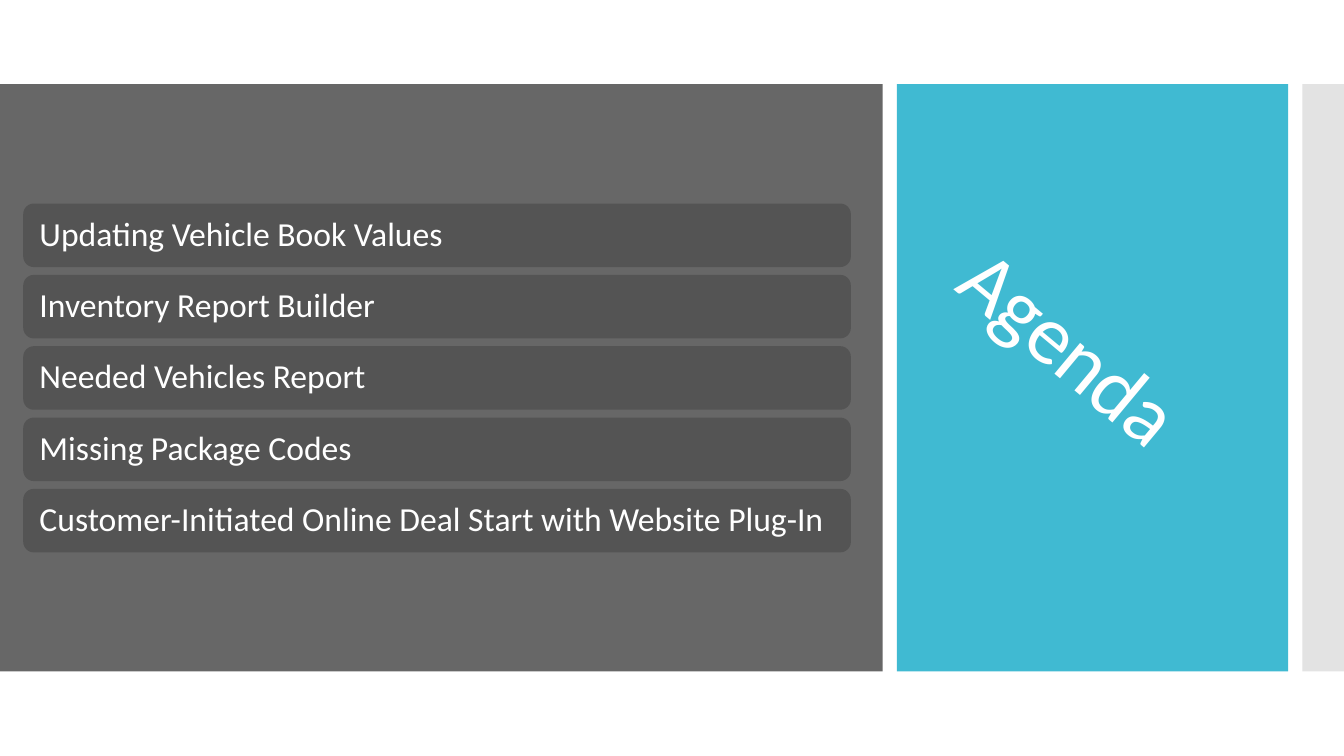
from pptx import Presentation
from pptx.dml.color import RGBColor
from pptx.enum import shapes, text
from pptx.util import Pt

COLORS = {"panel": "676767", "bar": "545454", "accent": "40BAD2",
          "strip": "E3E3E3", "white": "FFFFFF"}

presentation = Presentation()
presentation.slide_width, presentation.slide_height = Pt(960), Pt(540)
slide = presentation.slides.add_slide(presentation.slide_layouts[6])


def add_block(kind, left, top, width, height, color):
    shape = slide.shapes.add_shape(kind, Pt(left), Pt(top), Pt(width), Pt(height))
    shape.shadow.inherit = False
    shape.fill.solid()
    shape.fill.fore_color.rgb = RGBColor.from_string(COLORS[color])
    shape.line.fill.background()
    return shape


def write_text(shape, content, size, inset, spacing=None):
    frame = shape.text_frame
    frame.word_wrap = True
    frame.vertical_anchor = text.MSO_ANCHOR.MIDDLE
    frame.margin_left = frame.margin_right = Pt(inset)
    frame.margin_top = frame.margin_bottom = Pt(3.6)
    paragraph = frame.paragraphs[0]
    paragraph.alignment = text.PP_ALIGN.LEFT
    paragraph.line_spacing = 0.9
    run = paragraph.add_run()
    run.text = content
    run.font.name = "Calibri"
    run.font.size = Pt(size)
    run.font.color.rgb = RGBColor.from_string(COLORS["white"])
    if spacing is not None:
        run._r.get_or_add_rPr().set("spc", str(round(spacing * 100)))


# Background panels
for left, width, color in [(0, 630.6, "panel"), (640.7, 279.4, "accent"),
                           (930.2, 29.8, "strip")]:
    add_block(shapes.MSO_SHAPE.RECTANGLE, left, 60, width, 419.5, color)

# Rotated title
title = slide.shapes.add_textbox(Pt(661), Pt(228.2), Pt(231.8), Pt(66.2))
title.rotation = 39.8
write_text(title, "Agenda", size=60, inset=7.2, spacing=-0.6)

# Agenda bars
topics = ["Updating Vehicle Book Values", "Inventory Report Builder",
          "Needed Vehicles Report", "Missing Package Codes",
          "Customer-Initiated Online Deal Start with Website Plug-In"]
for index, topic in enumerate(topics):
    bar = add_block(shapes.MSO_SHAPE.ROUNDED_RECTANGLE,
                    16.6, 145.4 + index * 50.95, 591.2, 45.4, "bar")
    write_text(bar, topic, size=24, inset=9.4)

presentation.save("out.pptx")
